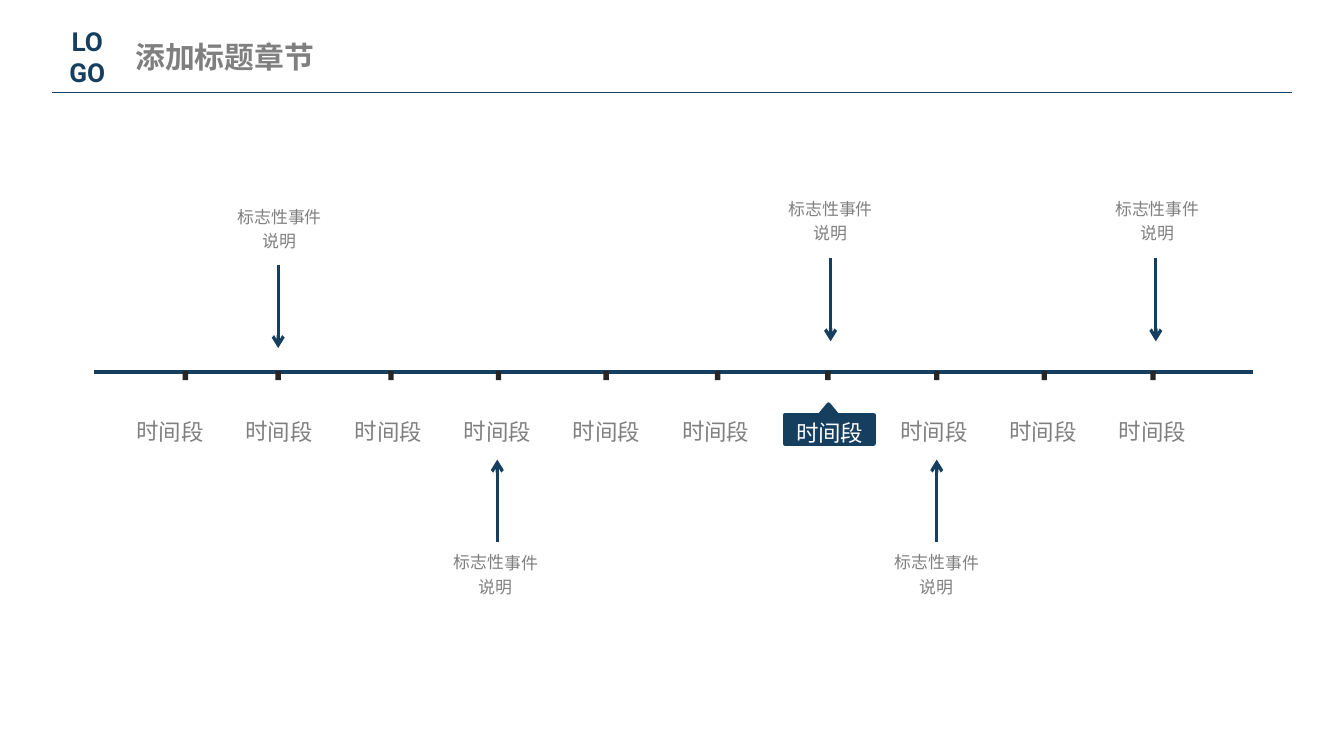
from lxml import etree
from pptx import Presentation
from pptx.dml.color import RGBColor
from pptx.enum.shapes import MSO_CONNECTOR as CONNECTOR, MSO_SHAPE as SHAPE
from pptx.enum.text import MSO_AUTO_SIZE as AUTO_SIZE, PP_ALIGN as ALIGN
from pptx.oxml.ns import qn
from pptx.util import Inches, Pt

NAVY, RULE, GREY, DARK, WHITE = "163E5F", "143D5F", "7F7F7F", "262626", "FFFFFF"
CJK = "Noto Sans CJK SC"

TITLE = "添加标题章节"
LOGO_LINES = ["LO", "GO"]
PERIODS = ["时间段"] * 10
CURRENT = 6
TICK_LEFTS = [1.36, 2.05, 2.89, 3.69, 4.49, 5.32, 6.14, 6.95, 7.75, 8.56]
EVENT = "标志性事件说明"
# arrow x, arrow start y, arrow end y, label left, label top
EVENTS = [
    (2.07, 1.97, 2.59, 1.64, 1.46),
    (6.18, 1.92, 2.54, 5.74, 1.40),
    (8.60, 1.92, 2.54, 8.17, 1.40),
    (3.70, 4.03, 3.42, 3.25, 4.03),
    (6.97, 4.03, 3.42, 6.53, 4.03),
]
PERIOD_FIRST, PERIOD_LAST, PERIOD_TOP = 0.9, 8.21, 3.02
PERIOD_STEP = (PERIOD_LAST - PERIOD_FIRST) / (len(PERIODS) - 1)

PERIOD_FONT = {"size": Pt(12), "name": CJK}
CURRENT_FONT = {"size": Pt(12), "name": "Calibri"}
EVENT_FONT = {"size": Pt(9), "name": CJK}
TITLE_FONT = {"size": Pt(16), "name": CJK, "bold": True}
LOGO_FONT = {"size": Pt(14), "name": "Roboto", "bold": True}


def rgb(color):
    return RGBColor.from_string(color)


def add_block(kind, box, fill, line_width=None):
    block = slide.shapes.add_shape(kind, *map(Inches, box))
    block.shadow.inherit = False
    block.fill.solid()
    block.fill.fore_color.rgb = rgb(fill)
    if line_width:
        block.line.color.rgb = rgb(fill)
        block.line.width = Pt(line_width)
    else:
        block.line.fill.background()


def add_line(start, end, color, width, arrow=False):
    line = slide.shapes.add_connector(CONNECTOR.STRAIGHT, *map(Inches, start + end))
    line.line.color.rgb = rgb(color)
    line.line.width = Pt(width)
    properties = line._element.spPr
    if arrow:
        etree.SubElement(properties.find(qn("a:ln")), qn("a:tailEnd"), type="arrow")
    etree.SubElement(properties, qn("a:effectLst"))


def add_text(lines, box, font, color, align=ALIGN.CENTER, spacing=None, rotation=0):
    label = slide.shapes.add_textbox(*map(Inches, box))
    label.rotation = rotation
    frame = label.text_frame
    frame.word_wrap = True
    frame.auto_size = AUTO_SIZE.SHAPE_TO_FIT_TEXT
    frame.text = "\n".join(lines)
    for paragraph in frame.paragraphs:
        paragraph.alignment = align
        paragraph.line_spacing = spacing
        run = paragraph.runs[0]
        for key, value in font.items():
            setattr(run.font, key, value)
        run.font.color.rgb = rgb(color)
        east_asian = etree.Element(qn("a:ea"), typeface=CJK)
        run.font._element.find(qn("a:latin")).addnext(east_asian)


def add_label(text, box, font, color):
    """Add a timeline label: loose lines and a very slight tilt."""
    add_text([text], box, font, color, spacing=1.2, rotation=0.5)


prs = Presentation()
prs.slide_width = Inches(10)
prs.slide_height = prs.slide_width * 9 // 16
slide = prs.slides.add_slide(prs.slide_layouts[6])

# Highlighted period and the timeline axis
add_block(SHAPE.RECTANGLE, (5.84, 3.09, 0.66, 0.21), NAVY, 2.25)
add_block(SHAPE.ISOSCELES_TRIANGLE, (6.05, 3.01, 0.23, 0.14), NAVY, 2.25)
add_label(PERIODS[CURRENT], (5.81, 3.03, 0.73, 0.32), CURRENT_FONT, WHITE)
add_line((0.7, 2.77), (9.32, 2.77), NAVY, 2.25)

for i, period in enumerate(PERIODS):
    if i != CURRENT:
        left = PERIOD_FIRST + i * PERIOD_STEP
        add_label(period, (left, PERIOD_TOP, 0.73, 0.32), PERIOD_FONT, GREY)

for x, start_y, end_y, left, top in EVENTS:
    add_line((x, start_y), (x, end_y), NAVY, 1.75, arrow=True)
    add_label(EVENT, (left, top, 0.88, 0.46), EVENT_FONT, GREY)

for left in TICK_LEFTS:
    add_block(SHAPE.RECTANGLE, (left, 2.76, 0.04, 0.07), DARK)

# Header
add_line((0.39, 0.69), (9.61, 0.69), RULE, 0.75)
add_text([TITLE], (0.91, 0.24, 1.86, 0.37), TITLE_FONT, GREY, align=ALIGN.LEFT)
add_text(LOGO_LINES, (0.31, 0.14, 0.68, 0.57), LOGO_FONT, NAVY)

prs.save("out.pptx")
